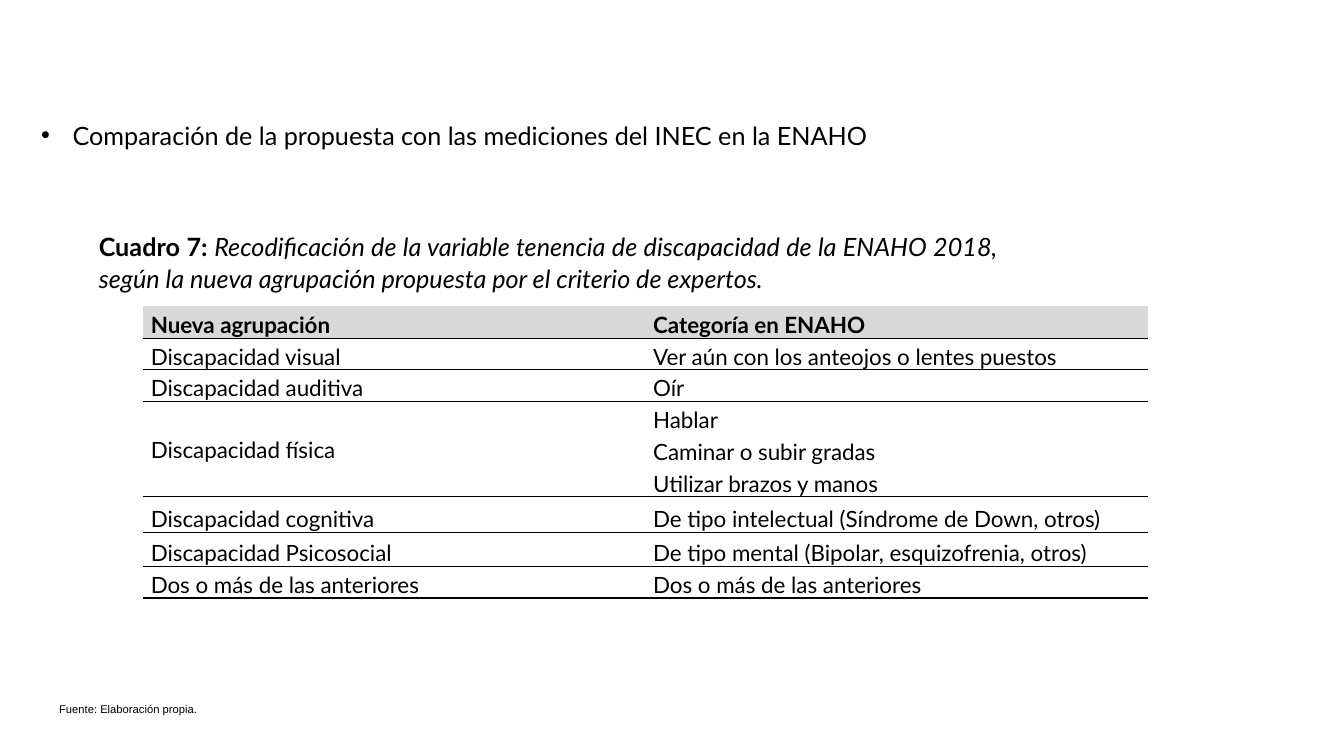
from dataclasses import dataclass
from lxml.etree import SubElement
from pptx import Presentation
from pptx.dml.color import RGBColor
from pptx.enum.text import MSO_ANCHOR, MSO_AUTO_SIZE, PP_ALIGN
from pptx.oxml.ns import qn
from pptx.slide import Slide
from pptx.table import Table, _Cell
from pptx.text.text import TextFrame, _Paragraph
from pptx.util import Cm, Pt

BLACK = "000000"
WHITE = "FFFFFF"
HEADER_GREY = "D9D9D9"


@dataclass(frozen=True)
class TextStyle:
    size: float
    font: str = "Lato"
    bold: bool = False
    italic: bool = False


@dataclass(frozen=True)
class Box:
    left: float
    top: float
    width: float
    height: float


@dataclass(frozen=True)
class Group:
    name: str
    categories: tuple[str, ...]
    height: float = 0.8


GROUPS = (
    Group("Nueva agrupación", ("Categoría en ENAHO",)),
    Group("Discapacidad visual", ("Ver aún con los anteojos o lentes puestos",)),
    Group("Discapacidad auditiva", ("Oír",)),
    Group("Discapacidad física", ("Hablar", "Caminar o subir gradas", "Utilizar brazos y manos")),
    Group("Discapacidad cognitiva", ("De tipo intelectual (Síndrome de Down, otros)",), 0.89),
    Group("Discapacidad Psicosocial", ("De tipo mental (Bipolar, esquizofrenia, otros)",), 0.86),
    Group("Dos o más de las anteriores", ("Dos o más de las anteriores",)),
)
TABLE_BOX = Box(3.61, 7.72, 25.32, 7.35)


def color(value: str) -> RGBColor:
    return RGBColor.from_string(value)


def add_run(paragraph: _Paragraph, text: str, style: TextStyle) -> None:
    run = paragraph.add_run()
    run.text = text
    run.font.size = Pt(style.size)
    run.font.name = style.font
    run.font.bold = style.bold
    run.font.italic = style.italic
    run.font.color.rgb = color(BLACK)


def add_text(slide: Slide, box: Box, *parts: tuple[str, TextStyle]) -> TextFrame:
    shape = slide.shapes.add_textbox(Cm(box.left), Cm(box.top), Cm(box.width), Cm(box.height))
    text_frame = shape.text_frame
    text_frame.word_wrap = True
    text_frame.auto_size = MSO_AUTO_SIZE.SHAPE_TO_FIT_TEXT
    for text, style in parts:
        add_run(text_frame.paragraphs[0], text, style)
    return text_frame


def add_bullet(paragraph: _Paragraph, indent: float) -> None:
    properties = paragraph._p.get_or_add_pPr()
    properties.set("marL", str(Cm(indent)))
    properties.set("indent", str(-Cm(indent)))
    SubElement(properties, qn("a:buFont"), typeface="Arial")
    SubElement(properties, qn("a:buChar"), char="•")


def set_borders(cell: _Cell, top: bool, bottom: bool) -> None:
    properties = cell._tc.get_or_add_tcPr()
    sides = (("a:lnL", False), ("a:lnR", False), ("a:lnT", top), ("a:lnB", bottom))
    for position, (tag, visible) in enumerate(sides):
        line = SubElement(properties, qn(tag), w=str(Pt(1)))
        if visible:
            fill = SubElement(line, qn("a:solidFill"))
            SubElement(fill, qn("a:srgbClr"), val=BLACK)
        else:
            SubElement(line, qn("a:noFill"))
        properties.insert(position, line)


def format_cell(cell: _Cell, header: bool, top: bool, bottom: bool) -> None:
    cell.fill.solid()
    cell.fill.fore_color.rgb = color(HEADER_GREY if header else WHITE)
    cell.margin_left = cell.margin_right = Cm(0.19)
    cell.margin_top = cell.margin_bottom = 0
    cell.vertical_anchor = MSO_ANCHOR.BOTTOM
    set_borders(cell, top, bottom)


def write_cell(cell: _Cell, text: str, style: TextStyle) -> None:
    paragraph = cell.text_frame.paragraphs[0]
    paragraph.line_spacing = 1.07
    add_run(paragraph, text, style)


def fill_group(table: Table, group: Group, first_row: int) -> None:
    header = first_row == 0
    last_row = first_row + len(group.categories) - 1
    style = TextStyle(16, bold=header)
    for row, category in enumerate(group.categories, first_row):
        table.rows[row].height = Cm(group.height)
        format_cell(table.cell(row, 0), header, not header, True)
        format_cell(table.cell(row, 1), header, row == first_row and not header, row == last_row)
        write_cell(table.cell(row, 1), category, style)
    name_cell = table.cell(first_row, 0)
    if last_row > first_row:
        name_cell.merge(table.cell(last_row, 0))
        name_cell.vertical_anchor = MSO_ANCHOR.MIDDLE
    write_cell(name_cell, group.name, style)


def add_group_table(slide: Slide, box: Box) -> None:
    row_count = sum(len(group.categories) for group in GROUPS)
    frame = slide.shapes.add_table(
        row_count, 2, Cm(box.left), Cm(box.top), Cm(box.width), Cm(box.height)
    )
    table = frame.table
    table.first_row = False
    table.horz_banding = False
    first_row = 0
    for group in GROUPS:
        fill_group(table, group, first_row)
        first_row += len(group.categories)


def main() -> None:
    presentation = Presentation()
    presentation.slide_width = Cm(33.87)
    presentation.slide_height = Cm(19.05)
    slide = presentation.slides.add_slide(presentation.slide_layouts[6])

    add_text(
        slide, Box(1.24, 17.58, 10.26, 0.6),
        ("Fuente: Elaboración propia.", TextStyle(8, "Arial")),
    )
    heading = add_text(
        slide, Box(0.79, 2.9, 32.26, 1.02),
        ("Comparación de la propuesta con las mediciones del INEC en la ENAHO", TextStyle(18)),
    )
    add_bullet(heading.paragraphs[0], 0.79)

    caption = add_text(
        slide, Box(2.24, 5.64, 23.16, 1.85),
        ("Cuadro 7: ", TextStyle(18, bold=True)),
        (
            "Recodificación de la variable tenencia de discapacidad de la ENAHO 2018, "
            "según la nueva agrupación propuesta por el criterio de expertos.",
            TextStyle(18, italic=True),
        ),
    )
    paragraph = caption.paragraphs[0]
    paragraph.alignment = PP_ALIGN.JUSTIFY
    paragraph.line_spacing = 1.07
    paragraph.space_after = Pt(8)

    add_group_table(slide, TABLE_BOX)
    presentation.save("out.pptx")


if __name__ == "__main__":
    main()
